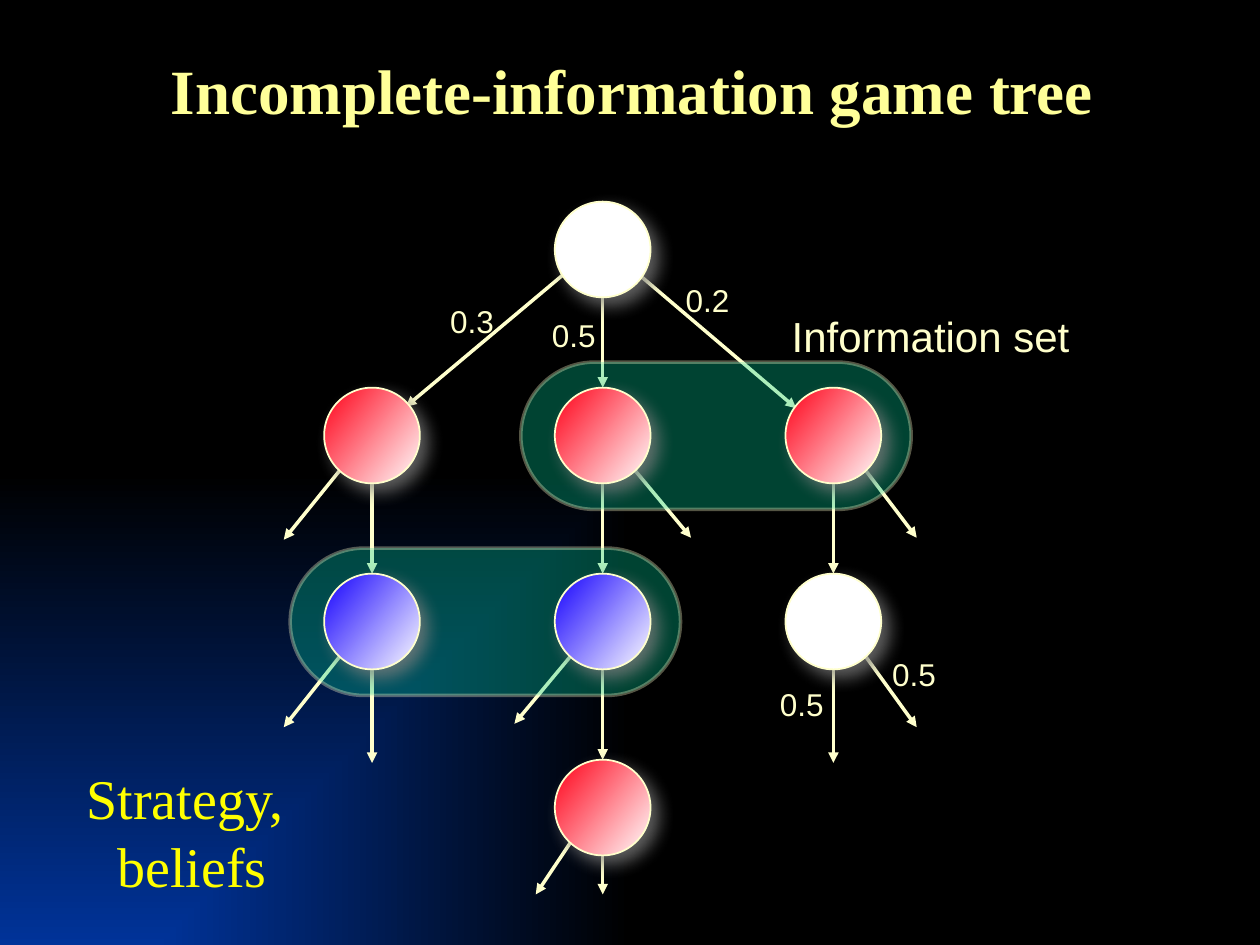
"""Build a slide showing an incomplete-information game tree."""
from lxml.etree import SubElement
from pptx import Presentation
from pptx.dml.color import RGBColor
from pptx.enum.shapes import MSO_CONNECTOR, MSO_SHAPE
from pptx.enum.text import MSO_ANCHOR, MSO_AUTO_SIZE, PP_ALIGN
from pptx.oxml.ns import qn
from pptx.util import Cm, Pt


def rgb(color):
    return RGBColor.from_string(color)


def add_xml(parent, tag, **attrs):
    return SubElement(parent, qn(tag), {k: str(v) for k, v in attrs.items()})


CREAM, RED, BLUE, WHITE = "FFFFCC", "FF0017", "1400FE", "FFFFFF"
COLS = [7.5 + 4.65 * i for i in range(3)]
ROWS = [5.03 + 3.75 * i for i in range(4)]
DIAM = 1.93
RADIUS = DIAM / 2

prs = Presentation()
prs.slide_width, prs.slide_height = Cm(25.4), Cm(19.05)
s = prs.slides.add_slide(prs.slide_layouts[5])

fill = s.background.fill
fill.gradient()
for stop, color in zip(fill.gradient_stops, ("003399", "000000")):
    stop.color.rgb = rgb(color)
grad = s._element.find(".//" + qn("a:gradFill"))
grad.remove(grad.find(qn("a:lin")))
add_xml(add_xml(grad, "a:path", path="rect"), "a:fillToRect", l=0, t=100000, r=100000, b=0)

title = s.shapes.title
title.left, title.top, title.width, title.height = Cm(0.61), Cm(0.76), Cm(24.26), Cm(2.08)
tf = title.text_frame
tf.vertical_anchor = MSO_ANCHOR.MIDDLE
p = tf.paragraphs[0]
p.alignment = PP_ALIGN.CENTER
r = p.add_run()
r.text = "Incomplete-information game tree"
r.font.name, r.font.size, r.font.bold = "Times New Roman", Pt(36), True
r.font.color.rgb = rgb("FFFF99")

links = [((1, 0), (1, 1)), ((0, 1), (0, 2)), ((1, 1), (1, 2)), ((2, 1), (2, 2)), ((1, 2), (1, 3))]
arrows = [(COLS[a], ROWS[b] + RADIUS, COLS[c], ROWS[d] - RADIUS) for (a, b), (c, d) in links]
arrows += [(COLS[c], ROWS[r] + RADIUS, COLS[c], y) for c, r, y in [(0, 2, 15.38), (2, 2, 15.38), (1, 3, 18.03)]]
arrows += [(11.35, 5.54, 8.18, 8.2), (12.85, 5.51, 16.05, 8.23)]
branches = [(0, 1, -1.78, 2.1), (1, 1, 1.78, 2.06), (2, 1, 1.68, 2.06), (0, 2, -1.78, 2.13),
            (1, 2, -1.78, 2.06), (2, 2, 1.68, 2.13), (1, 3, -1.35, 1.75)]
for col, row, dx, dy in branches:
    start = 0.64 if dx > 0 else -0.64
    arrows.append((COLS[col] + start, ROWS[row] + 0.69, COLS[col] + dx, ROWS[row] + dy))

connectors = []
for ends in arrows:
    line = s.shapes.add_connector(MSO_CONNECTOR.STRAIGHT, *[Cm(v) for v in ends])
    line.line.color.rgb = rgb(CREAM)
    line.line.width = Pt(2)
    add_xml(line.line._get_or_add_ln(), "a:tailEnd", type="triangle")
    add_xml(line._element.spPr, "a:effectLst")
    connectors.append(line)

for col, row in [(1, 1), (0, 2)]:
    sp = s.shapes.add_shape(MSO_SHAPE.ROUNDED_RECTANGLE, Cm(COLS[col] - 1.65), Cm(ROWS[row] - 1.48),
                            Cm(7.87), Cm(2.97))
    sp.adjustments[0] = 0.5
    sp.shadow.inherit = False
    sp.fill.solid()
    sp.fill.fore_color.rgb = rgb("00CC99")
    sp.line.color.rgb = rgb(CREAM)
    sp.line.width = Pt(2)
    for clr in sp._element.spPr.iter(qn("a:srgbClr")):
        add_xml(clr, "a:alpha", val=33000)

nodes = {}
for col, row, color in [(1, 0, WHITE), (0, 1, RED), (1, 1, RED), (2, 1, RED),
                        (0, 2, BLUE), (1, 2, BLUE), (2, 2, WHITE), (1, 3, RED)]:
    sp = s.shapes.add_shape(MSO_SHAPE.OVAL, Cm(COLS[col] - RADIUS), Cm(ROWS[row] - RADIUS),
                            Cm(DIAM), Cm(DIAM))
    if color == WHITE:
        sp.fill.solid()
        sp.fill.fore_color.rgb = rgb(WHITE)
    else:
        sp.fill.gradient()
        sp.fill.gradient_angle = 322
        for stop, c in zip(sp.fill.gradient_stops, (color, WHITE)):
            stop.color.rgb = rgb(c)
    sp.line.color.rgb = rgb(CREAM)
    sp.line.width = Pt(1)
    sp.shadow.inherit = False
    shadow = add_xml(sp._element.spPr.find(qn("a:effectLst")), "a:outerShdw", blurRad=Pt(10),
                     dist=Pt(6), dir=2700000, algn="ctr", rotWithShape=0)
    add_xml(add_xml(shadow, "a:srgbClr", val="808080"), "a:alpha", val=75000)
    nodes[col, row] = sp

for line, (parent, child) in zip(connectors, links):
    line.end_connect(nodes[child], 0)

labels = [(15.93, 6.25, 5.66, 1.02, 24, "Arial", CREAM, ["Information set"]),
          (1.73, 15.37, 4.29, 2.74, 32, "Times New Roman", "FFFF00", ["Strategy, ", "beliefs"])]
labels += [(x, y, 1.19, 1.02, 18, "Arial", CREAM, [text]) for x, y, text in
           [(8.92, 5.84, "0.3"), (10.97, 6.12, "0.5"), (13.67, 5.41, "0.2"),
            (15.57, 13.56, "0.5"), (17.83, 12.95, "0.5")]]
for x, y, w, h, size, font, color, lines in labels:
    tf = s.shapes.add_textbox(Cm(x), Cm(y), Cm(w), Cm(h)).text_frame
    tf.margin_left = tf.margin_right = tf.margin_top = tf.margin_bottom = 0
    tf.word_wrap = False
    tf.auto_size = MSO_AUTO_SIZE.SHAPE_TO_FIT_TEXT
    tf.vertical_anchor = MSO_ANCHOR.BOTTOM
    for i, text in enumerate(lines):
        p = tf.add_paragraph() if i else tf.paragraphs[0]
        p.alignment = PP_ALIGN.CENTER
        r = p.add_run()
        r.text = text
        r.font.name, r.font.size = font, Pt(size)
        r.font.color.rgb = rgb(color)

prs.save("out.pptx")
